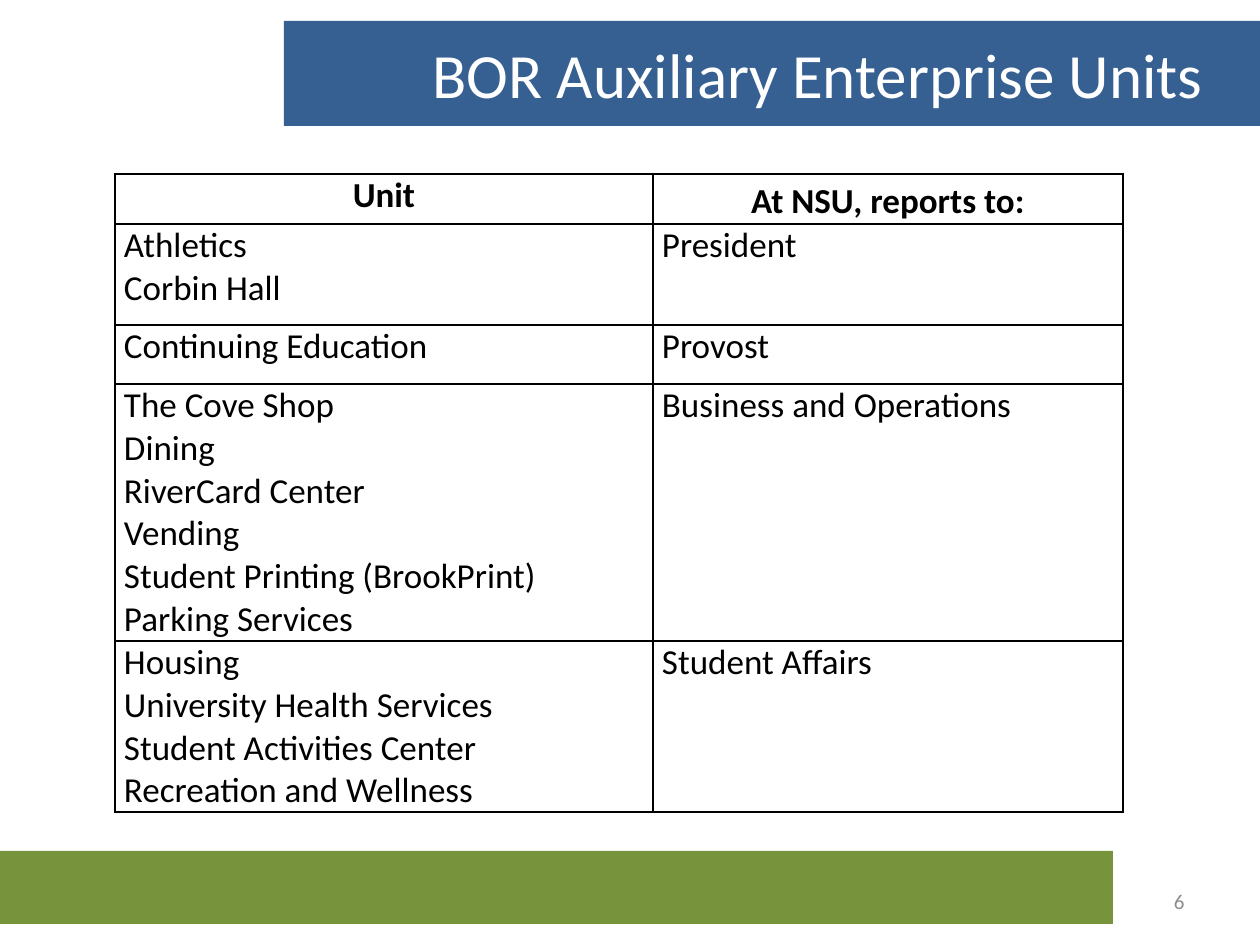
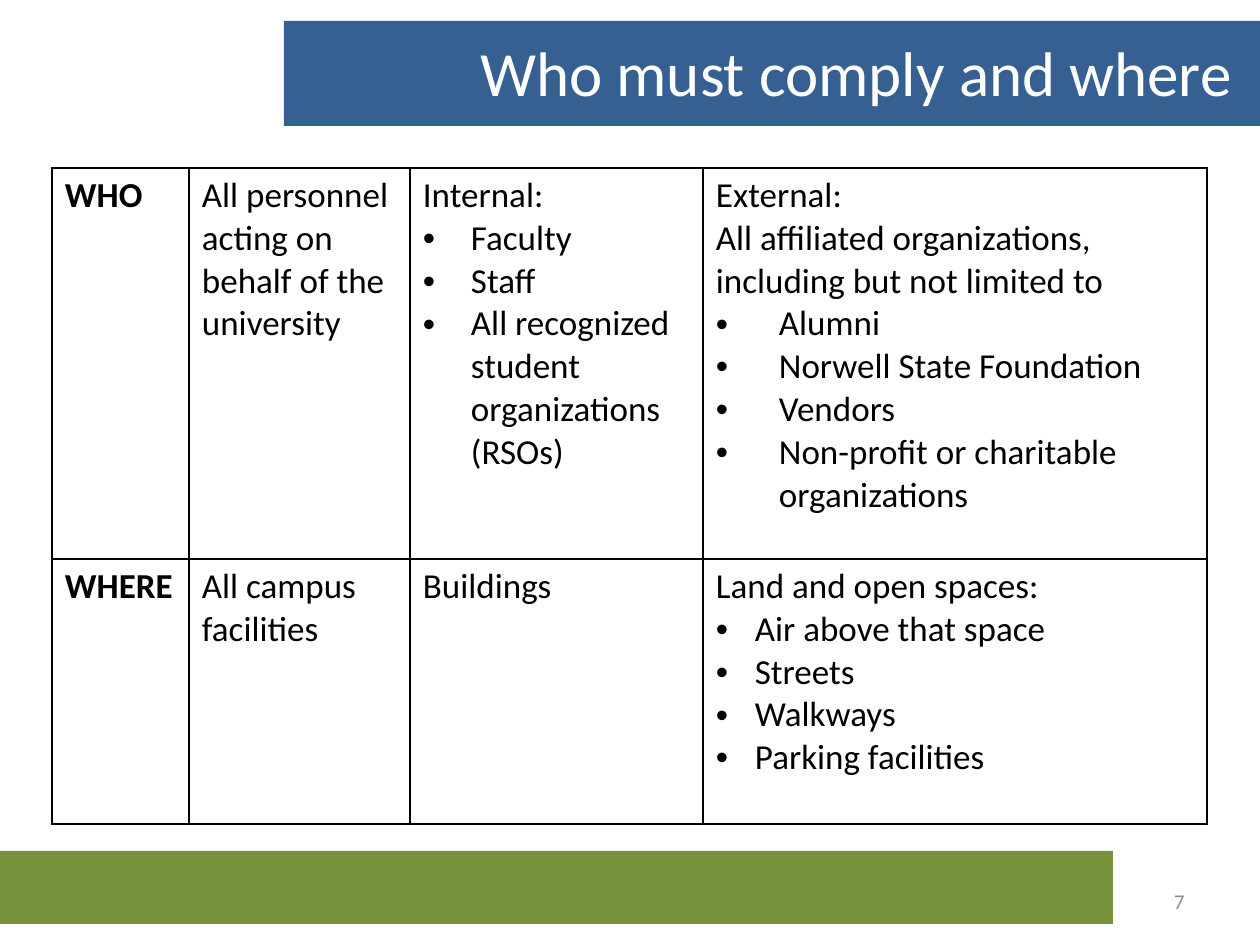
from lxml.etree import SubElement
from pptx import Presentation
from pptx.dml.color import RGBColor
from pptx.enum.shapes import MSO_SHAPE
from pptx.enum.text import MSO_ANCHOR, PP_ALIGN
from pptx.oxml.ns import qn
from pptx.util import Pt

SCALE = 9144000 / 1260
HUES = {"blue": "376092", "green": "77933C", "white": "FFFFFF",
        "black": "000000", "grey": "8C8C8C"}
TITLE = {"size": Pt(36), "name": "Calibri", "bold": False}
FOOT = {"size": Pt(12), "name": "Calibri", "bold": False}
BODY = {"size": Pt(20), "name": "Calibri", "bold": False}
HEAD = {**BODY, "bold": True}


def px(num):
    return round(num * SCALE)


def write(para, text, form, hue, align=PP_ALIGN.LEFT):
    para.alignment = align
    run = para.add_run()
    run.text = text
    for key, val in form.items():
        setattr(run.font, key, val)
    run.font.color.rgb = RGBColor.from_string(HUES[hue])


pages = [
    {
        "title": "BOR Auxiliary Enterprise Units",
        "place": None, "edge": 57, "num": "6",
        "spot": (115, 174), "pad": (9, 0),
        "cols": [538, 470], "rows": [50, 101, 59, 257, 171],
        "bold": [(0, 0), (0, 1)], "mid": [(0, 0), (0, 1)],
        "space": {(0, 1): 1.15}, "dents": {},
        "cells": [
            ["Unit", "At NSU, reports to:"],
            ["Athletics\nCorbin Hall", "President"],
            ["Continuing Education", "Provost"],
            ["The Cove Shop\nDining\nRiverCard Center\nVending\n"
             "Student Printing (BrookPrint)\nParking Services",
             "Business and Operations"],
            ["Housing\nUniversity Health Services\n"
             "Student Activities Center\nRecreation and Wellness",
             "Student Affairs"],
        ],
    },
    {
        "title": "Who must comply and where",
        "place": (461, 26, 799, 90), "edge": 28, "num": "7",
        "spot": (52, 168), "pad": (13, 6),
        "cols": [137, 221, 293, 504], "rows": [391, 265],
        "bold": [(0, 0), (1, 0)], "mid": [], "space": {},
        "dents": {(0, 2): 48, (0, 3): 63, (1, 3): 39},
        "cells": [
            ["WHO",
             "All personnel acting on behalf of the university",
             "Internal:\n•Faculty\n•Staff\n"
             "•All recognized student organizations (RSOs)",
             "External:\n"
             "All affiliated organizations, including but not limited to\n"
             "•Alumni\n•Norwell State Foundation\n•Vendors\n"
             "•Non-profit or charitable organizations"],
            ["WHERE", "All campus facilities", "Buildings",
             "Land and open spaces:\n•Air above that space\n•Streets\n"
             "•Walkways\n•Parking facilities"],
        ],
    },
]

deck = Presentation()
deck.slide_width, deck.slide_height = px(1260), px(945)

for page in pages:
    slide = deck.slides.add_slide(deck.slide_layouts[6])
    shapes = slide.shapes

    note = shapes.add_textbox(px(903), px(876), px(294), px(50)).text_frame
    note.word_wrap = True
    note.vertical_anchor = MSO_ANCHOR.MIDDLE
    write(note.paragraphs[0], page["num"], FOOT, "grey", PP_ALIGN.RIGHT)

    bands = [("green", (0, 851, 1113, 73)), ("blue", (284, 21, 976, 105))]
    if page["place"]:
        bands.append(("blue", page["place"]))
    for hue, place in bands:
        band = shapes.add_shape(MSO_SHAPE.RECTANGLE, *map(px, place))
        band.shadow.inherit = False
        band.fill.solid()
        band.fill.fore_color.rgb = RGBColor.from_string(HUES[hue])
        band.line.fill.background()
    frame = band.text_frame
    frame.word_wrap = True
    frame.vertical_anchor = MSO_ANCHOR.MIDDLE
    frame.margin_right = px(page["edge"])
    write(frame.paragraphs[0], page["title"], TITLE, "white", PP_ALIGN.RIGHT)

    cols, rows = page["cols"], page["rows"]
    size = sum(cols), sum(rows)
    grid = shapes.add_table(len(rows), len(cols),
                            *map(px, page["spot"] + size)).table
    grid.first_row = grid.horz_banding = False
    for col, wide in zip(grid.columns, cols):
        col.width = px(wide)
    for row, tall in zip(grid.rows, rows):
        row.height = px(tall)

    side, top = map(px, page["pad"])
    pads = {"margin_left": side, "margin_right": side,
            "margin_top": top, "margin_bottom": top}
    for r, line in enumerate(page["cells"]):
        for c, text in enumerate(line):
            spot = r, c
            cell = grid.cell(r, c)
            for key, val in pads.items():
                setattr(cell, key, val)
            props = cell._tc.get_or_add_tcPr()
            for name in ("lnL", "lnR", "lnT", "lnB"):
                edge = SubElement(props, qn("a:" + name), w=str(Pt(1)))
                fill = SubElement(edge, qn("a:solidFill"))
                SubElement(fill, qn("a:srgbClr"), val=HUES["black"])
            cell.fill.background()
            form = HEAD if spot in page["bold"] else BODY
            align = PP_ALIGN.CENTER if spot in page["mid"] else PP_ALIGN.LEFT
            for i, part in enumerate(text.split("\n")):
                frame = cell.text_frame
                para = frame.add_paragraph() if i else frame.paragraphs[0]
                write(para, part.lstrip("•"), form, "black", align)
                if spot in page["space"]:
                    para.line_spacing = page["space"][spot]
                if part.startswith("•"):
                    dent = px(page["dents"][spot])
                    trait = para._p.get_or_add_pPr()
                    trait.set("marL", str(dent))
                    trait.set("indent", str(-dent))
                    SubElement(trait, qn("a:buFont"), typeface="Arial")
                    SubElement(trait, qn("a:buChar"), char="•")

deck.save("out.pptx")
